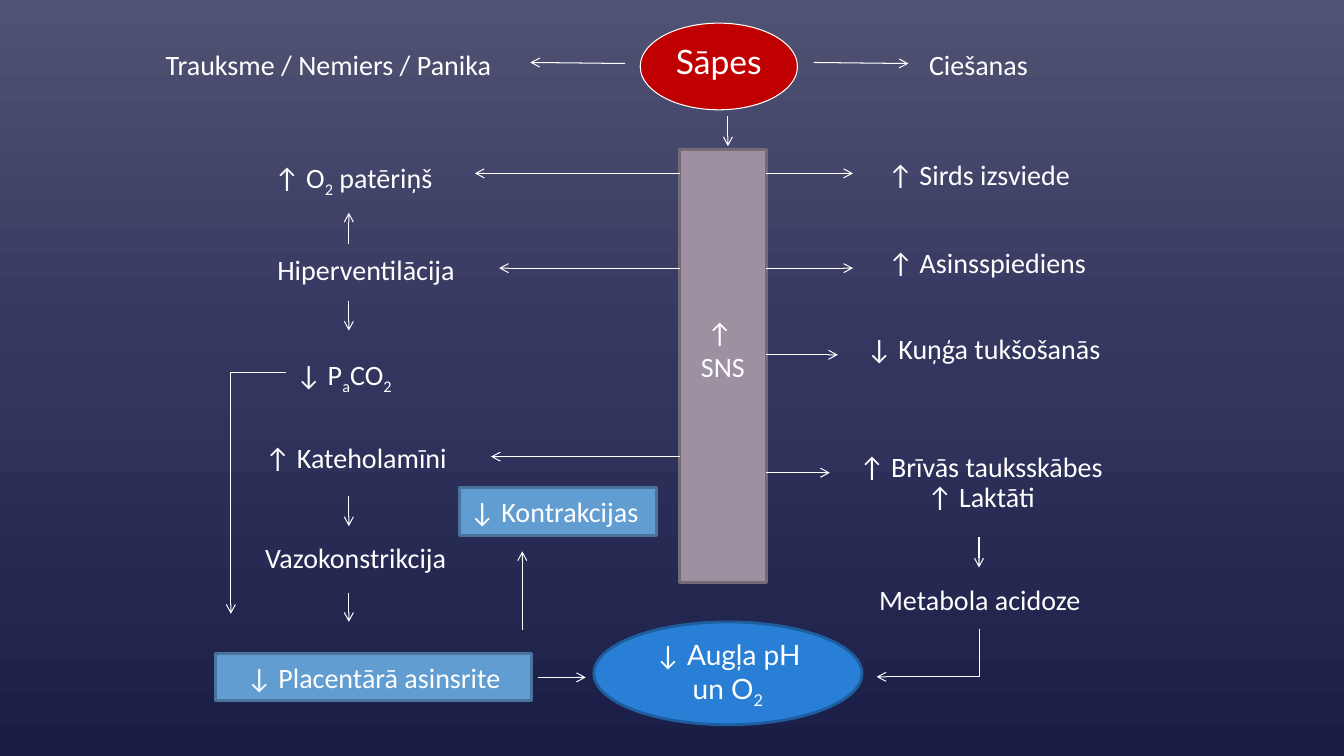
from copy import deepcopy
from dataclasses import dataclass

from pptx import Presentation
from pptx.dml.color import RGBColor
from pptx.enum.shapes import MSO_CONNECTOR as Link, MSO_SHAPE as Kind
from pptx.enum.text import MSO_ANCHOR as Anchor, MSO_AUTO_SIZE as Fit, PP_ALIGN as Align
from pptx.oxml.ns import qn
from pptx.oxml.xmlchemy import OxmlElement as Tag
from pptx.util import Inches, Pt


@dataclass(frozen=True)
class Theme:
    back: tuple = ((0, "505273"), (0.5, "32355E"), (1, "1A1E47"))
    ink: str = "FFFFFF"
    red: str = "C00000"
    blue: str = "297FD5"
    navy: str = "1E5E9E"
    sky: str = "629DD1"
    steel: str = "49749B"
    mauve: str = "9D90A0"
    plum: str = "746B76"
    body: str = "Calibri"
    head: str = "Lato"
    size: int = 20
    large: int = 24
    thin: float = 0.75
    thick: float = 2


LOOK = Theme()


@dataclass(frozen=True)
class Label:
    """Text in a place; every second part between bars is a subscript."""
    text: str
    left: float
    top: float
    width: float
    height: float = 0.4
    wrap: bool = False
    gap: float = 0.9
    align: Align = Align.CENTER


@dataclass(frozen=True)
class Node:
    text: str
    kind: Kind
    left: float
    top: float
    width: float
    height: float
    fill: str
    edge: str
    weight: float = LOOK.thick
    face: str = LOOK.body
    size: int = LOOK.size
    align: Align = Align.CENTER
    anchor: Anchor = Anchor.MIDDLE
    inset: float = 0.05


@dataclass(frozen=True)
class Arrow:
    x1: float
    y1: float
    x2: float
    y2: float
    bent: bool = False
    turn: int = 0


LABELS = (
    Label("Ciešanas", 9.11, 0.46, 1.19),
    Label("Trauksme / Nemiers / Panika ", 1.48, 0.46, 3.62, wrap=True),
    Label("↑ Sirds izsviede ", 8.67, 1.55, 2.14),
    Label("↑ Asinsspiediens", 8.7, 2.42, 2.18),
    Label("↓ Kuņģa tukšošanās", 8.23, 3.28, 3.05, wrap=True),
    Label("↑ Brīvās tauksskābes\n↑ Laktāti", 7.92, 4.45, 3.62, 0.71, True),
    Label("Metabola acidoze", 8.62, 5.73, 2.2, 0.44, gap=1, align=Align.LEFT),
    Label("↑ O|2| patēriņš", 2.6, 1.55, 1.81),
    Label("Hiperventilācija", 2.64, 2.49, 1.98),
    Label("↓ P|a|CO|2", 2.82, 3.5, 1.18),
    Label("↑ Kateholamīni", 2.52, 4.36, 2.02),
    Label("Vazokonstrikcija", 2.53, 5.31, 2.02, 0.44, gap=1, align=Align.LEFT),
)

NODES = (
    Node("Sāpes", Kind.OVAL, 6.35, 0.23, 1.56, 0.86, LOOK.red, LOOK.ink,
         LOOK.thin, LOOK.head, LOOK.large, anchor=Anchor.TOP),
    Node("↑ \nSNS", Kind.RECTANGLE, 6.74, 1.48, 0.86, 4.3, LOOK.mauve, LOOK.plum,
         anchor=Anchor.TOP, inset=1.65),
    Node("↓ ||Augļa pH un O|2", Kind.OVAL, 5.89, 6.17, 2.66, 1.02, LOOK.blue,
         LOOK.navy, face=LOOK.head),
    Node("↓ Placentārā asinsrite", Kind.RECTANGLE, 2.14, 6.48, 3.13, 0.47,
         LOOK.sky, LOOK.steel),
    Node("↓ Kontrakcijas", Kind.RECTANGLE, 4.56, 4.84, 1.95, 0.47,
         LOOK.sky, LOOK.steel, align=Align.LEFT),
)

SNS_LEFT, SNS_RIGHT, CHAIN = 6.74, 7.6, 3.46

ARROWS = (
    Arrow(6.2, 0.63, 5.26, 0.62),
    Arrow(8.07, 0.62, 9.01, 0.63),
    Arrow(7.22, 1.15, 7.22, 1.45),
    *(Arrow(SNS_LEFT, y, x, y) for x, y in ((4.71, 1.72), (4.95, 2.66), (4.87, 4.53))),
    *(Arrow(SNS_RIGHT, y, x, y)
      for x, y in ((8.46, 1.72), (8.46, 2.66), (8.31, 3.52), (8.23, 4.69))),
    *(Arrow(CHAIN, start, CHAIN, end)
      for start, end in ((2.42, 2.11), (2.99, 3.28), (4.92, 5.22), (5.88, 6.17))),
    Arrow(9.71, 5.33, 9.71, 5.63),
    Arrow(5.18, 6.25, 5.18, 5.47),
    Arrow(5.34, 6.72, 5.81, 6.72),
    Arrow(2.84, 3.7, 2.29, 6.09, bent=True),
    Arrow(8.97, 5.97, 9.44, 6.99, bent=True, turn=90),
)


def rgb(code: str) -> RGBColor:
    return RGBColor.from_string(code)


def write(frame, text: str, face: str, size: int, align: Align, gap: float = 1) -> None:
    for row, line in enumerate(text.split("\n")):
        para = frame.add_paragraph() if row else frame.paragraphs[0]
        para.alignment, para.line_spacing = align, gap
        for spot, part in enumerate(line.split("|")):
            if not part:
                continue
            run = para.add_run()
            run.text = part
            run.font.name = LOOK.body if part[0] in "↑↓" else face
            run.font.size = Pt(size)
            run.font.color.rgb = rgb(LOOK.ink)
            if spot % 2:
                run._r.get_or_add_rPr().set("baseline", "-25000")


def paint(slide) -> None:
    """Fill the background with the three-stop gradient."""
    fill = slide.background.fill
    fill.gradient()
    fill.gradient_angle = 270
    stops = next(slide.element.iter(qn("a:gsLst")))
    stops.append(deepcopy(stops[-1]))
    for stop, (place, code) in zip(fill.gradient_stops, LOOK.back):
        stop.position = place
        stop.color.rgb = rgb(code)


def add_label(slide, label: Label) -> None:
    box = slide.shapes.add_textbox(
        *map(Inches, (label.left, label.top, label.width, label.height)))
    frame = box.text_frame
    frame.word_wrap = label.wrap
    frame.auto_size = Fit.SHAPE_TO_FIT_TEXT
    write(frame, label.text, LOOK.body, LOOK.size, label.align, label.gap)


def add_node(slide, node: Node) -> None:
    shape = slide.shapes.add_shape(
        node.kind, *map(Inches, (node.left, node.top, node.width, node.height)))
    shape.shadow.inherit = False
    shape.fill.solid()
    shape.fill.fore_color.rgb = rgb(node.fill)
    shape.line.color.rgb = rgb(node.edge)
    shape.line.width = Pt(node.weight)
    frame = shape.text_frame
    frame.word_wrap = True
    frame.vertical_anchor = node.anchor
    frame.margin_top = Inches(node.inset)
    write(frame, node.text, node.face, node.size, node.align)


def add_arrow(slide, arrow: Arrow) -> None:
    line = slide.shapes.add_connector(
        Link.ELBOW if arrow.bent else Link.STRAIGHT,
        *map(Inches, (arrow.x1, arrow.y1, arrow.x2, arrow.y2)))
    line.line.color.rgb = rgb(LOOK.ink)
    line.line.width = Pt(LOOK.thin)
    props = line.element.spPr
    tip = Tag("a:tailEnd")
    tip.set("type", "arrow")
    props.find(qn("a:ln")).append(tip)
    props.append(Tag("a:effectLst"))
    if arrow.bent:
        props.find(qn("a:prstGeom")).set("prst", "bentConnector2")
    if arrow.turn:
        props.find(qn("a:xfrm")).set("rot", str(arrow.turn * 60000))


def main() -> None:
    deck = Presentation()
    deck.slide_width, deck.slide_height = Inches(13.33), Inches(7.5)
    slide = deck.slides.add_slide(deck.slide_layouts[6])
    paint(slide)
    for label in LABELS:
        add_label(slide, label)
    for node in NODES:
        add_node(slide, node)
    for arrow in ARROWS:
        add_arrow(slide, arrow)
    deck.save("out.pptx")


if __name__ == "__main__":
    main()
